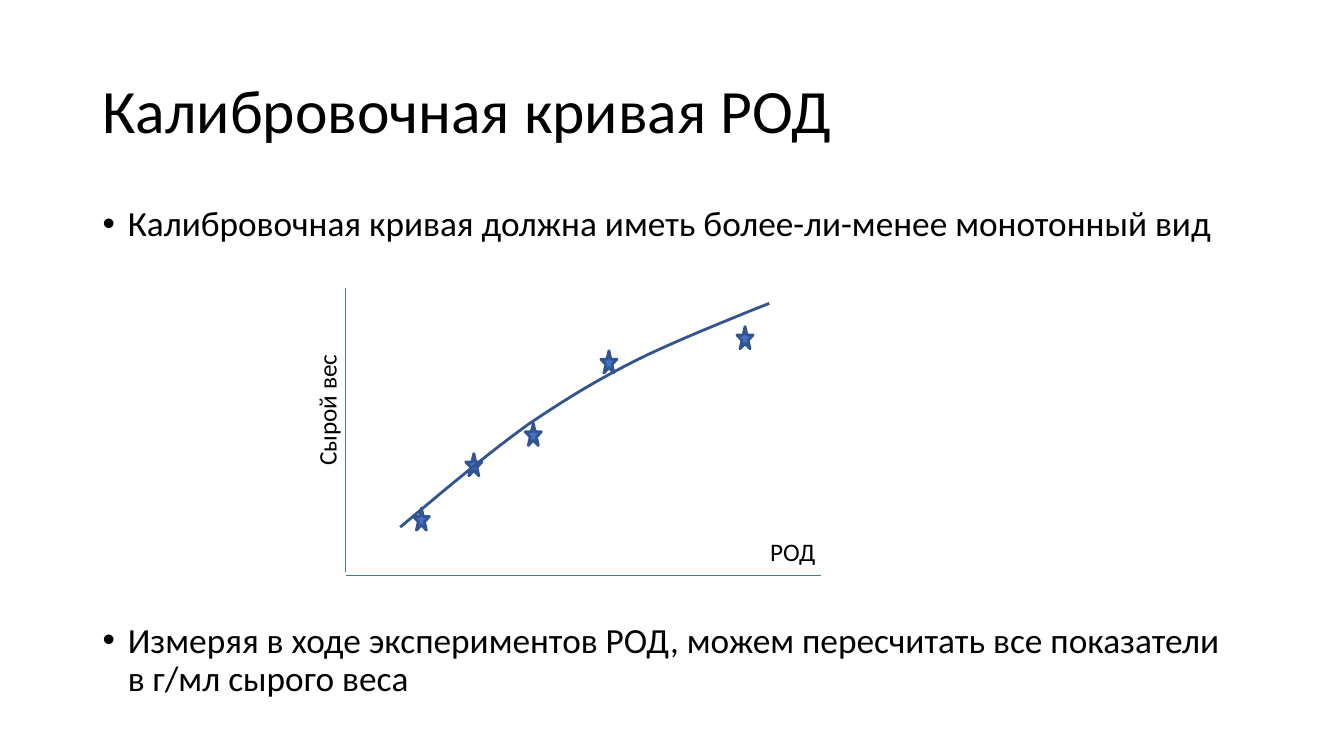
from lxml import etree
from pptx import Presentation
from pptx.dml.color import RGBColor as RGB
from pptx.enum.shapes import MSO_CONNECTOR as LINE, MSO_SHAPE as SHAPE
from pptx.enum.text import MSO_ANCHOR as ANCHOR
from pptx.oxml.ns import qn
from pptx.util import Inches, Pt

COLORS = {"text": "000000", "blue": "4472C4", "dark": "325490"}

deck = Presentation()
deck.slide_width, deck.slide_height = Inches(13.33), Inches(7.5)
slide = deck.slides.add_slide(deck.slide_layouts[6])
shapes = slide.shapes


def add_text(box, lines, size):
    area = shapes.add_textbox(*map(Inches, box))
    frame = area.text_frame
    frame.word_wrap = True
    frame.text = "\n".join(lines)
    for para in frame.paragraphs:
        font = para.runs[0].font
        font.name, font.size = "Calibri", Pt(size)
        font.color.rgb = RGB.from_string(COLORS["text"])
    return area


def set_line(shape, color, width):
    shape.line.color.rgb = RGB.from_string(COLORS[color])
    shape.line.width = Pt(width)


# Title
title = add_text((0.92, 0.4, 11.5, 1.45), ["Калибровочная кривая РОД"], 44)
title.text_frame.vertical_anchor = ANCHOR.MIDDLE
title.text_frame.paragraphs[0].line_spacing = 0.9

# Bullets above and below the graph
body = add_text((0.92, 2, 11.5, 4.76), [
    "Калибровочная кривая должна иметь более-ли-менее монотонный вид",
    "Измеряя в ходе экспериментов РОД, можем пересчитать все показатели в г/мл сырого веса",
], 25.2)
for para, gap in zip(body.text_frame.paragraphs, (0, 270)):
    para.line_spacing = 0.9
    para.space_before = Pt(gap)
    props = para._p.get_or_add_pPr()
    props.set("marL", str(Inches(0.25)))
    props.set("indent", str(Inches(-0.25)))
    etree.SubElement(props, qn("a:buFont"), typeface="Arial")
    etree.SubElement(props, qn("a:buChar"), char="•")

# Axes
for ends in ((8.14, 5.71, 3.43, 5.71), (3.43, 2.86, 3.43, 5.67)):
    axis = shapes.add_connector(LINE.STRAIGHT, *map(Inches, ends))
    set_line(axis, "blue", 0.75)
    etree.SubElement(axis._element.spPr, qn("a:effectLst"))

# Axis labels
label = add_text((2.38, 3.66, 1.72, 0.4), ["Сырой вес"], 18)
label.rotation = 270
add_text((7.54, 5.27, 1.72, 0.4), ["РОД"], 18)

# Measured points
for left, top in ((4.1, 5.04), (4.62, 4.5), (5.21, 4.2), (5.96, 3.48), (7.31, 3.24)):
    star = shapes.add_shape(SHAPE.STAR_5_POINT, *map(Inches, (left, top, 0.16, 0.22)))
    star.shadow.inherit = False
    star.fill.solid()
    star.fill.fore_color.rgb = RGB.from_string(COLORS["blue"])
    set_line(star, "dark", 2)

# Smooth curve: three Bezier arcs sampled at equal steps
knots = [(3.97, 5.23), (4.41, 4.86), (4.85, 4.49), (5.24, 4.21), (5.64, 3.94),
         (5.94, 3.76), (6.34, 3.56), (6.74, 3.36), (7.63, 3.01), (7.63, 3.01)]
STEPS = 16
dots = []
for start in (0, 3, 6):
    for step in range(1, STEPS + 1):
        t = step / STEPS
        parts = ((1 - t) ** 3, 3 * t * (1 - t) ** 2, 3 * t ** 2 * (1 - t), t ** 3)
        arc = knots[start:start + 4]
        dots.append([Inches(sum(w * k[i] for w, k in zip(parts, arc))) for i in (0, 1)])
path = shapes.build_freeform(*map(Inches, knots[0]))
path.add_line_segments(dots, close=False)
curve = path.convert_to_shape()
curve.shadow.inherit = False
curve.fill.background()
set_line(curve, "dark", 2)

deck.save("out.pptx")
